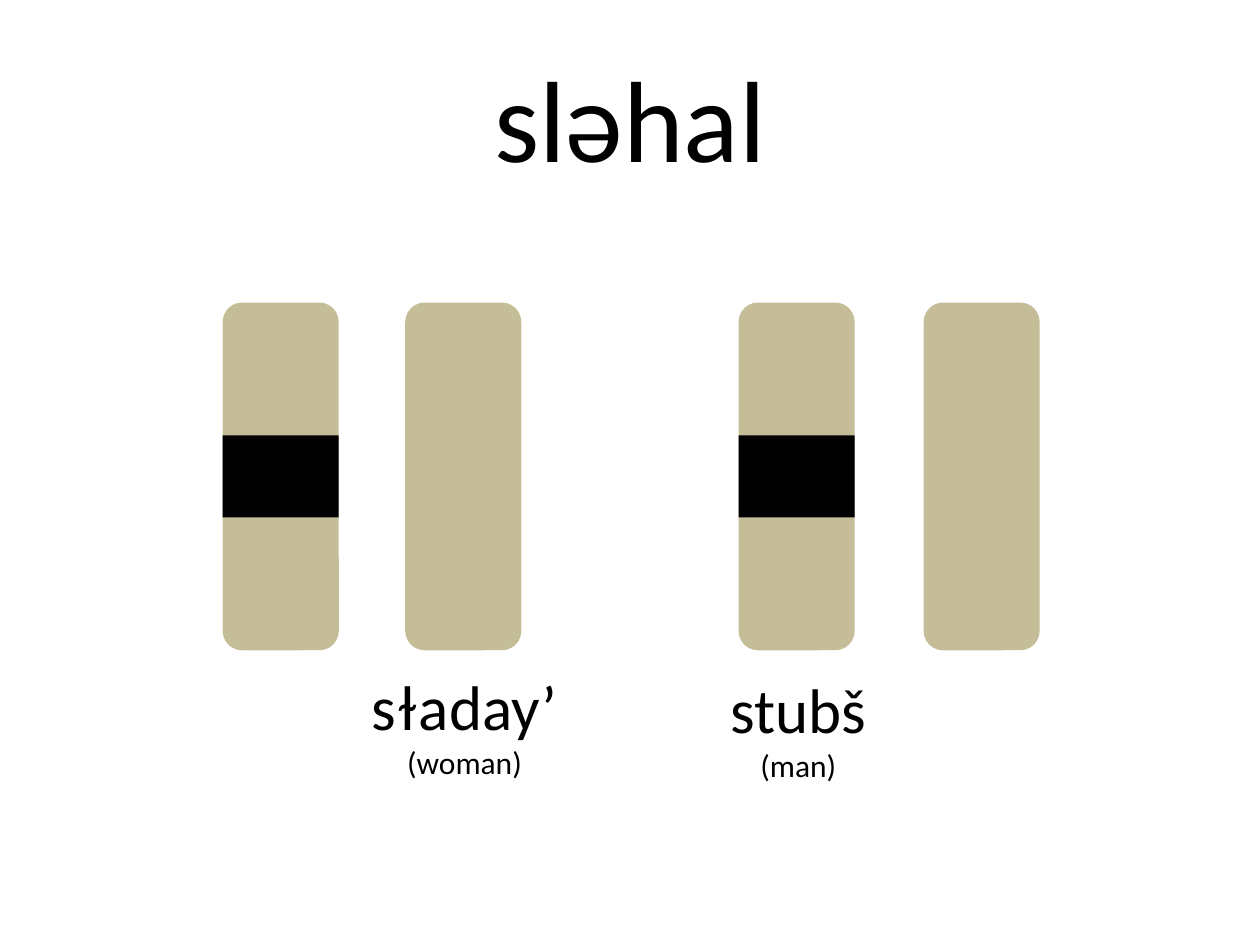
from pptx import Presentation
from pptx.dml.color import RGBColor
from pptx.enum.shapes import MSO_SHAPE
from pptx.enum.text import MSO_ANCHOR, PP_ALIGN
from pptx.util import Cm, Pt

BONE = "C4BD97"
BLACK = "000000"
BONE_WIDTH, BONE_HEIGHT = 2.34, 7.01
BAND_HEIGHT = 1.65
BONE_TOP = 6.1


def color(hex_value):
    return RGBColor.from_string(hex_value)


def add_text(page, left, top, width, height, lines, anchor=MSO_ANCHOR.TOP):
    """Place centred lines, each given as (wording, size in points)."""
    box = page.shapes.add_textbox(Cm(left), Cm(top), Cm(width), Cm(height))
    frame = box.text_frame
    frame.word_wrap = True
    frame.vertical_anchor = anchor
    for index, (wording, size) in enumerate(lines):
        para = frame.add_paragraph() if index else frame.paragraphs[0]
        para.alignment = PP_ALIGN.CENTER
        span = para.add_run()
        span.text = wording
        span.font.name = "Calibri"
        span.font.size = Pt(size)
        span.font.color.rgb = color(BLACK)


def add_block(parent, kind, left, top, width, height, fill):
    block = parent.shapes.add_shape(kind, Cm(left), Cm(top), Cm(width), Cm(height))
    block.shadow.inherit = False
    block.fill.solid()
    block.fill.fore_color.rgb = color(fill)
    block.line.fill.background()


def add_bone(page, left, top, banded=False):
    """Draw a game bone; a banded one is grouped with its middle band."""
    parent = page.shapes.add_group_shape() if banded else page
    add_block(parent, MSO_SHAPE.ROUNDED_RECTANGLE, left, top,
              BONE_WIDTH, BONE_HEIGHT, BONE)
    if banded:
        band_top = top + (BONE_HEIGHT - BAND_HEIGHT) / 2
        add_block(parent, MSO_SHAPE.RECTANGLE, left, band_top,
                  BONE_WIDTH, BAND_HEIGHT, BLACK)


def add_bone_pair(page, left, top, pitch):
    add_bone(page, left, top, banded=True)
    add_bone(page, left + pitch, top)


def main():
    deck = Presentation()
    deck.slide_width, deck.slide_height = Cm(25.4), Cm(19.05)
    page = deck.slides.add_slide(deck.slide_layouts[6])

    add_text(page, 1.27, 0.76, 22.86, 3.18, [("sləhal", 66)], MSO_ANCHOR.MIDDLE)
    add_bone_pair(page, 4.49, BONE_TOP, pitch=3.68)
    add_bone_pair(page, 14.89, BONE_TOP, pitch=3.73)
    add_text(page, 6, 13.34, 6.73, 2.57, [("sɫaday’", 36), ("(woman)", 18)])
    add_text(page, 12.73, 13.39, 6.73, 2.57, [("stubš", 36), ("(man)", 18)])

    deck.save("out.pptx")


if __name__ == "__main__":
    main()
